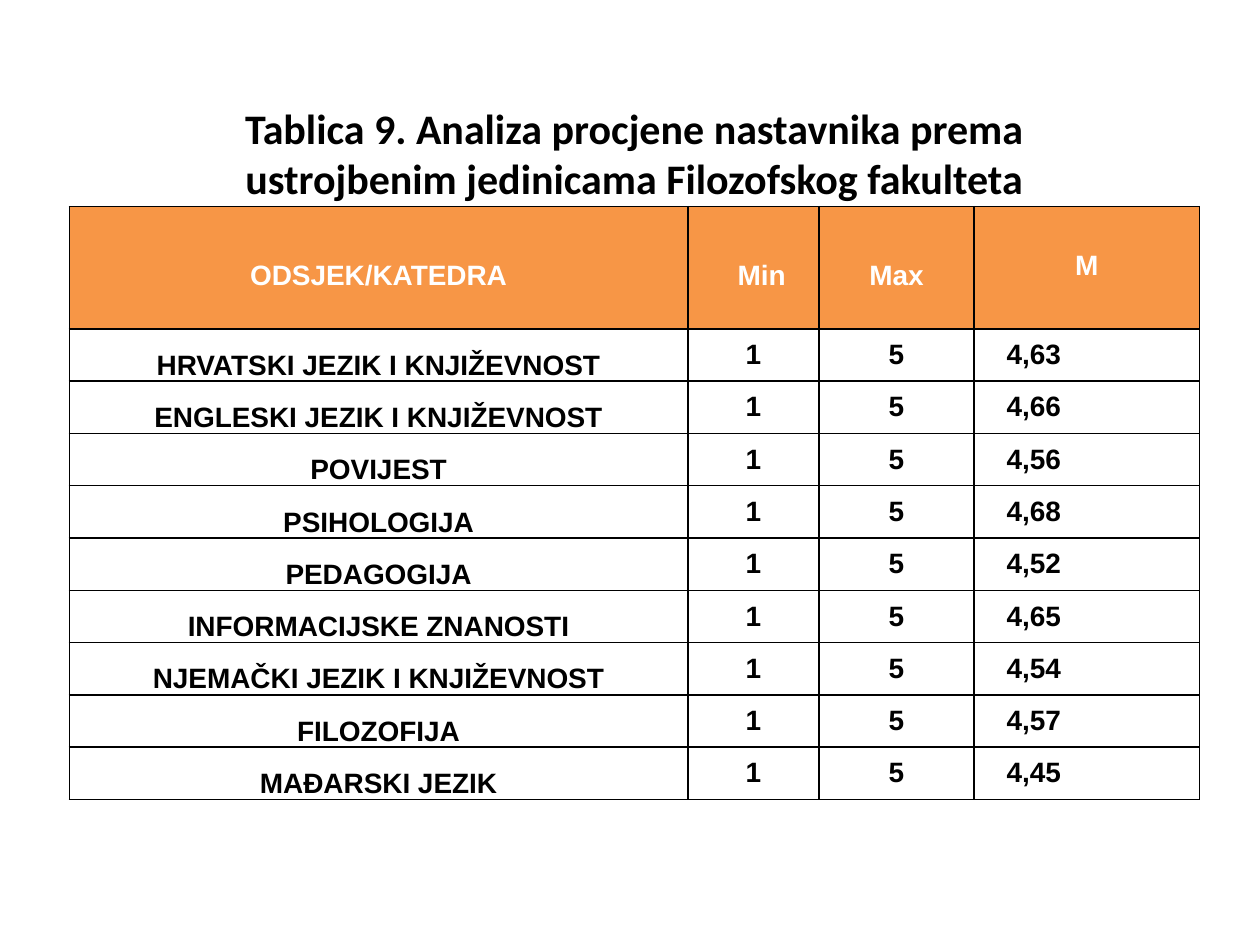
from lxml.etree import SubElement
from pptx import Presentation
from pptx.dml.color import RGBColor
from pptx.enum.text import MSO_ANCHOR, MSO_AUTO_SIZE, PP_ALIGN
from pptx.oxml.ns import qn
from pptx.util import Inches, Pt

BLACK, WHITE, ORANGE = "000000", "FFFFFF", "F79646"

HEADERS = ["ODSJEK/KATEDRA", "Min", "Max", "M"]
DEPARTMENTS = [
    ("HRVATSKI JEZIK I KNJIŽEVNOST", "4,63"),
    ("ENGLESKI JEZIK I KNJIŽEVNOST", "4,66"),
    ("POVIJEST", "4,56"),
    ("PSIHOLOGIJA", "4,68"),
    ("PEDAGOGIJA", "4,52"),
    ("INFORMACIJSKE ZNANOSTI", "4,65"),
    ("NJEMAČKI JEZIK I KNJIŽEVNOST", "4,54"),
    ("FILOZOFIJA", "4,57"),
    ("MAĐARSKI JEZIK", "4,45"),
]
COLUMN_WIDTHS = [4.91, 1.04, 1.23, 1.79]
HEADER_HEIGHT, ROW_HEIGHT = 0.97, 0.415
MEAN_RIGHT_MARGIN = 0.84


def color(hex_string):
    return RGBColor.from_string(hex_string)


class SlideBuilder:
    title_font, title_size = "Calibri", 24
    table_font, table_size = "Arial", 16

    def __init__(self, presentation):
        self.slide = presentation.slides.add_slide(presentation.slide_layouts[5])

    def format_paragraph(self, paragraph, font, size, font_color):
        paragraph.alignment = PP_ALIGN.CENTER
        for run in paragraph.runs:
            run.font.name, run.font.size, run.font.bold = font, Pt(size), True
            run.font.color.rgb = color(font_color)

    def title(self, text, left, top, width, height):
        shape = self.slide.shapes.title
        shape.left, shape.top = Inches(left), Inches(top)
        shape.width, shape.height = Inches(width), Inches(height)
        text_frame = shape.text_frame
        text_frame.text = text
        text_frame.word_wrap = True
        text_frame.vertical_anchor = MSO_ANCHOR.TOP
        text_frame.auto_size = MSO_AUTO_SIZE.SHAPE_TO_FIT_TEXT
        for paragraph in text_frame.paragraphs:
            self.format_paragraph(paragraph, self.title_font, self.title_size, BLACK)

    def table(self, left, top, widths, heights):
        table = self.slide.shapes.add_table(
            len(heights), len(widths), Inches(left), Inches(top),
            Inches(sum(widths)), Inches(sum(heights))).table
        for column, width in zip(table.columns, widths):
            column.width = Inches(width)
        for row, height in zip(table.rows, heights):
            row.height = Inches(height)
        return table

    def cell(self, cell, text, fill, font_color, anchor=MSO_ANCHOR.MIDDLE,
             left_margin=0, right_margin=0):
        cell.margin_left, cell.margin_right = Inches(left_margin), Inches(right_margin)
        cell.margin_top = cell.margin_bottom = 0
        cell.vertical_anchor = anchor
        self.borders(cell)
        cell.fill.solid()
        cell.fill.fore_color.rgb = color(fill)
        paragraph = cell.text_frame.paragraphs[0]
        paragraph.text = text
        self.format_paragraph(paragraph, self.table_font, self.table_size, font_color)
        return paragraph

    def borders(self, cell):
        properties = cell._tc.get_or_add_tcPr()
        for side in ("a:lnL", "a:lnR", "a:lnT", "a:lnB"):
            line = SubElement(properties, qn(side), w=str(Pt(1)))
            SubElement(SubElement(line, qn("a:solidFill")), qn("a:srgbClr"), val=BLACK)


def main():
    presentation = Presentation()
    presentation.slide_width, presentation.slide_height = Inches(10), Inches(7.5)
    builder = SlideBuilder(presentation)

    # Title
    builder.title("Tablica 9. Analiza procjene nastavnika prema\n"
                  "ustrojbenim jedinicama Filozofskog fakulteta", 0.98, 0.76, 8.11, 0.91)

    # Table header
    heights = [HEADER_HEIGHT] + [ROW_HEIGHT] * len(DEPARTMENTS)
    table = builder.table(0.55, 1.64, COLUMN_WIDTHS, heights)
    for column, header in enumerate(HEADERS):
        paragraph = builder.cell(table.cell(0, column), header, ORANGE, WHITE,
                                 left_margin=0.04, right_margin=0.04)
        paragraph.line_spacing = Pt(16) if header == "M" else 1.5
        if header == "Min":
            paragraph._p.get_or_add_pPr().set("indent", str(Inches(0.13)))

    # Table body
    for row, (department, mean) in enumerate(DEPARTMENTS, start=1):
        for column, text in enumerate([department, "1", "5", mean]):
            builder.cell(table.cell(row, column), text, WHITE, BLACK,
                         anchor=MSO_ANCHOR.BOTTOM if column == 0 else MSO_ANCHOR.MIDDLE,
                         right_margin=MEAN_RIGHT_MARGIN if column == 3 else 0)

    presentation.save("out.pptx")


if __name__ == "__main__":
    main()
